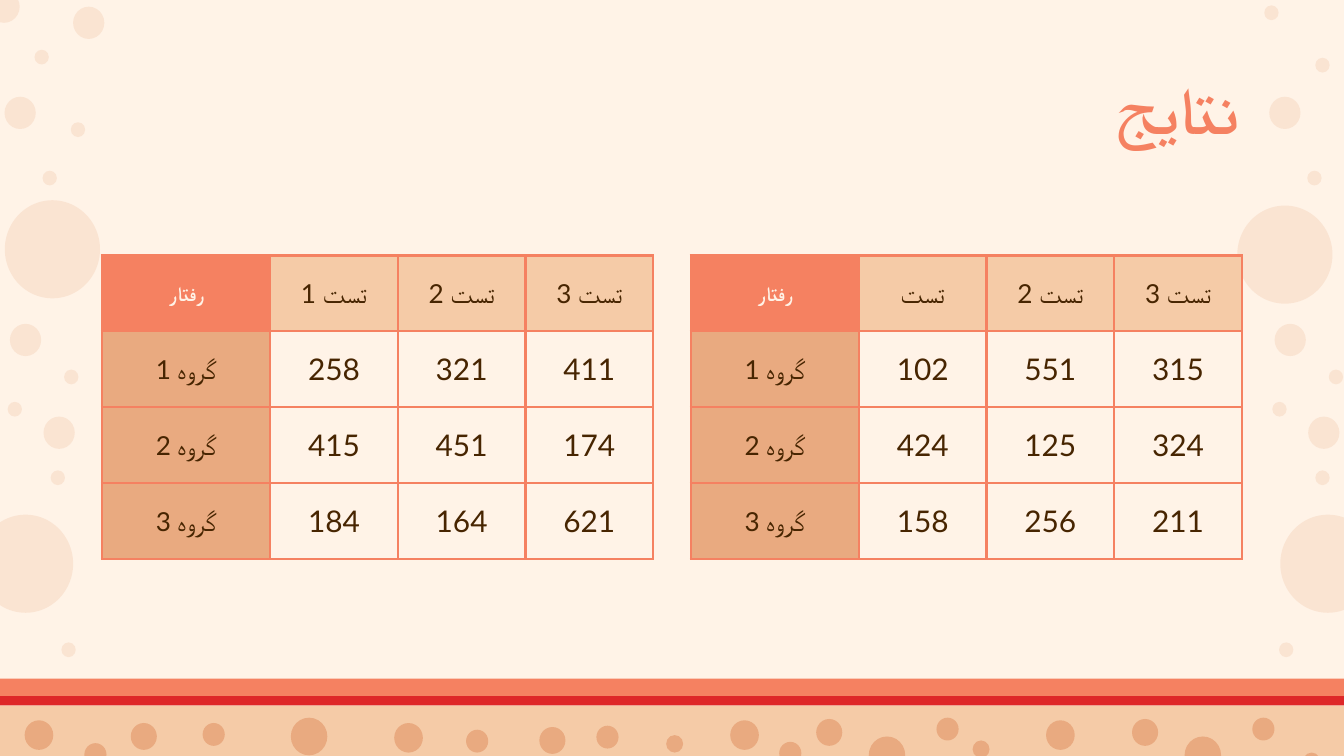
"""Build the results slide with two test score tables."""
from dataclasses import dataclass

from lxml import etree
from pptx import Presentation
from pptx.dml.color import RGBColor
from pptx.enum.shapes import MSO_SHAPE
from pptx.enum.text import MSO_ANCHOR, PP_ALIGN
from pptx.oxml.ns import qn
from pptx.util import Inches, Pt

RECT, OVAL = MSO_SHAPE.RECTANGLE, MSO_SHAPE.OVAL
MIDDLE = MSO_ANCHOR.MIDDLE
CENTER, RIGHT = PP_ALIGN.CENTER, PP_ALIGN.RIGHT
COLORS = {
    "cream": "FFF3E7",
    "coral": "F58161",
    "red": "DE2728",
    "sand": "F5CBA7",
    "tan": "E9AA80",
    "brown": "472501",
}
FONT = "Lato"
MARGINS = ("margin_left", "margin_right", "margin_top", "margin_bottom")
DOT_ASPECT = 0.97


@dataclass(frozen=True)
class Band:
    top: float
    height: float
    color: str


@dataclass(frozen=True)
class Dot:
    center: float
    top: float
    height: float


@dataclass(frozen=True)
class ScoreTable:
    left: float
    rows: list[list[str]]


@dataclass(frozen=True)
class TextStyle:
    size: int
    color: str
    bold: bool = False
    align: PP_ALIGN = CENTER


BANDS = [Band(5.25, 1.05, "sand"), Band(5.05, 0.13, "coral"), Band(5.18, 0.07, "red")]

FLOOR_GROUP = [Dot(5.54, 5.36, 0.22), Dot(6.17, 5.35, 0.2),
               Dot(6.6, 5.48, 0.28), Dot(7.05, 5.34, 0.17)]
FLOOR_SINGLES = [
    Dot(0.29, 5.36, 0.22), Dot(0.71, 5.53, 0.17), Dot(1.07, 5.38, 0.2),
    Dot(1.59, 5.38, 0.17), Dot(2.3, 5.34, 0.28), Dot(3.04, 5.38, 0.22),
    Dot(3.55, 5.43, 0.17), Dot(4.11, 5.41, 0.2), Dot(4.52, 5.4, 0.17),
    Dot(5.02, 5.47, 0.13), Dot(5.88, 5.52, 0.17), Dot(7.3, 5.51, 0.13),
    Dot(9.76, 5.6, 0.13),
]
SIDE_GROUP = [
    Dot(0.15, 0.72, 0.24), Dot(0.37, 1.27, 0.11), Dot(0.19, 2.41, 0.24),
    Dot(0.53, 2.75, 0.11), Dot(0.43, 3.5, 0.11), Dot(0.11, 2.99, 0.11),
    Dot(0.44, 3.1, 0.24),
]
SIDE_SINGLES = [
    Dot(0.19, 3.83, 0.73), Dot(0.66, 0.05, 0.24), Dot(0.03, -0.07, 0.24),
    Dot(0.31, 0.37, 0.11), Dot(0.58, 0.91, 0.11), Dot(0.39, 1.49, 0.73),
    Dot(0.51, 4.78, 0.11), Dot(9.88, 3.83, 0.73), Dot(9.84, 0.43, 0.11),
    Dot(9.56, 1.53, 0.73), Dot(9.57, 4.78, 0.11), Dot(9.46, 0.04, 0.11),
]
FLOOR_SHIFT, SIDE_SHIFT = 2.35, 9.41

TABLES = [
    ScoreTable(0.76, [["رفتار", "تست 1", "تست 2", "تست 3"],
                      ["گروه 1", "258", "321", "411"],
                      ["گروه 2", "415", "451", "174"],
                      ["گروه 3", "184", "164", "621"]]),
    ScoreTable(5.14, [["رفتار", "تست", "تست 2", "تست 3"],
                      ["گروه 1", "102", "551", "315"],
                      ["گروه 2", "424", "125", "324"],
                      ["گروه 3", "158", "256", "211"]]),
]
TABLE_TOP, TABLE_WIDTH, TABLE_HEIGHT = 1.9, 4.1, 2.26
COLUMN_WIDTHS = [1.25, 0.95, 0.95, 0.95]
TITLE_STYLE = TextStyle(35, "coral", True, RIGHT)
CORNER_STYLE = TextStyle(11, "cream", True)
LABEL_STYLE = TextStyle(14, "brown")
SCORE_STYLE = TextStyle(16, "brown")


def rgb(name: str) -> RGBColor:
    """Look up a palette colour."""
    return RGBColor.from_string(COLORS[name])


def add_filled(s, kind, box: tuple, color: str, alpha: int = 100) -> None:
    """Draw a borderless preset shape with an optional opacity in percent."""
    sp = s.shapes.add_shape(kind, *map(Inches, box))
    sp.shadow.inherit = False
    sp.fill.solid()
    sp.fill.fore_color.rgb = rgb(color)
    sp.line.fill.background()
    if alpha < 100:
        clr = sp.element.spPr.find(qn("a:solidFill"))[0]
        etree.SubElement(clr, qn("a:alpha"), val=str(alpha * 1000))


def add_dots(s, dots: list[Dot], shift: float = 0, alpha: int = 100) -> None:
    """Draw a set of round dots, moved sideways by shift."""
    for dot in dots:
        width = dot.height * DOT_ASPECT
        box = (dot.center + shift - width / 2, dot.top, width, dot.height)
        add_filled(s, OVAL, box, "tan", alpha)


def write_text(tf, text: str, style: TextStyle) -> None:
    """Write one right-to-left paragraph."""
    p = tf.paragraphs[0]
    p.alignment = style.align
    p._p.get_or_add_pPr().set("rtl", "1")
    r = p.add_run()
    r.text = text
    formats = {"name": FONT, "size": Pt(style.size), "bold": style.bold}
    for name, value in formats.items():
        setattr(r.font, name, value)
    r.font.color.rgb = rgb(style.color)
    etree.SubElement(r._r.get_or_add_rPr(), qn("a:cs"), typeface=FONT)


def set_margins(target) -> None:
    """Give a cell or text frame equal margins and middle anchoring."""
    for name in MARGINS:
        setattr(target, name, Inches(0.1))
    target.vertical_anchor = MIDDLE


def add_borders(cell) -> None:
    """Outline all four sides of a table cell."""
    tc_pr = cell._tc.get_or_add_tcPr()
    for side in ("lnL", "lnR", "lnT", "lnB"):
        ln = etree.SubElement(tc_pr, qn(f"a:{side}"), w=str(Pt(1.5)))
        fill = etree.SubElement(ln, qn("a:solidFill"))
        etree.SubElement(fill, qn("a:srgbClr"), val=COLORS["coral"])


def cell_look(row: int, col: int) -> tuple[str, TextStyle]:
    """Choose the fill and text style for a table position."""
    if row == 0:
        return ("sand", LABEL_STYLE) if col else ("coral", CORNER_STYLE)
    return ("cream", SCORE_STYLE) if col else ("tan", LABEL_STYLE)


def add_scores(s, spec: ScoreTable) -> None:
    """Draw one table of scores."""
    box = (spec.left, TABLE_TOP, TABLE_WIDTH, TABLE_HEIGHT)
    size = (len(spec.rows), len(COLUMN_WIDTHS))
    table = s.shapes.add_table(*size, *map(Inches, box)).table
    for column, width in zip(table.columns, COLUMN_WIDTHS):
        column.width = Inches(width)
    for i, row in enumerate(spec.rows):
        for j, text in enumerate(row):
            cell = table.cell(i, j)
            fill, style = cell_look(i, j)
            add_borders(cell)
            cell.fill.solid()
            cell.fill.fore_color.rgb = rgb(fill)
            set_margins(cell)
            write_text(cell.text_frame, text, style)


def add_title(s, text: str) -> None:
    """Place the title above the decoration."""
    sp = s.shapes.title
    box = {"left": 0.68, "top": 0.49, "width": 8.64, "height": 0.63}
    for name, value in box.items():
        setattr(sp, name, Inches(value))
    set_margins(sp.text_frame)
    write_text(sp.text_frame, text, TITLE_STYLE)
    sp.element.getparent().append(sp.element)


def main() -> None:
    """Assemble and save the slide."""
    prs = Presentation()
    prs.slide_width = Inches(10)
    prs.slide_height = prs.slide_width * 9 // 16
    s = prs.slides.add_slide(prs.slide_layouts[5])
    s.background.fill.solid()
    s.background.fill.fore_color.rgb = rgb("cream")
    for band in BANDS:
        add_filled(s, RECT, (0, band.top, 10, band.height), band.color)
    add_dots(s, FLOOR_SINGLES)
    add_dots(s, SIDE_SINGLES, alpha=20)
    for step in (0, 1):
        add_dots(s, FLOOR_GROUP, step * FLOOR_SHIFT)
        add_dots(s, SIDE_GROUP, step * SIDE_SHIFT, alpha=20)
    add_title(s, "نتایج")
    for spec in TABLES:
        add_scores(s, spec)
    prs.save("out.pptx")


if __name__ == "__main__":
    main()
